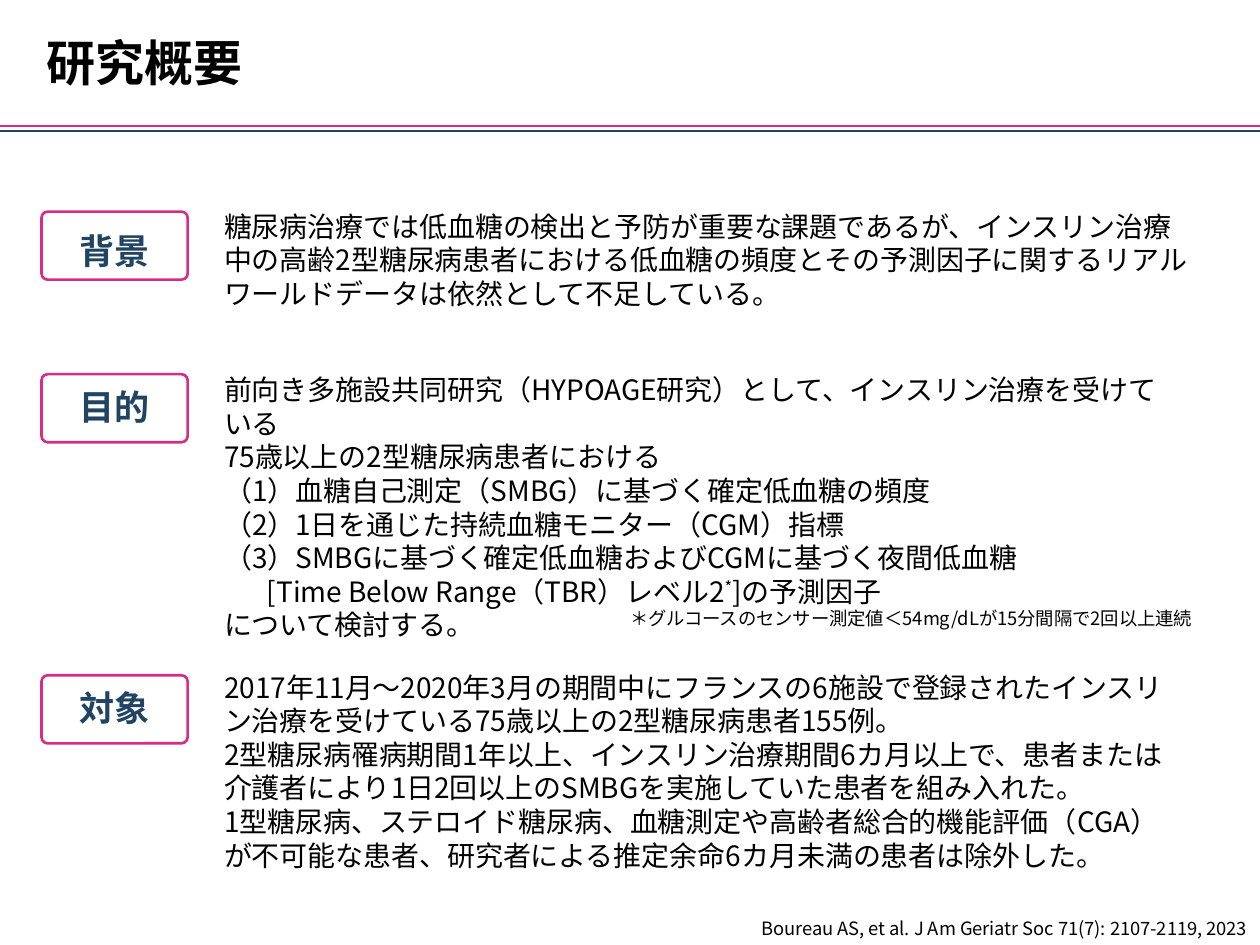
"""Build the study overview slide: background, objective and subjects."""
from lxml.etree import SubElement
from pptx import Presentation
from pptx.dml.color import RGBColor
from pptx.enum.shapes import MSO_CONNECTOR as Connector, MSO_SHAPE as Shape
from pptx.enum.text import MSO_ANCHOR as Anchor, MSO_AUTO_SIZE as AutoSize, PP_ALIGN as Align
from pptx.oxml.ns import qn
from pptx.util import Inches, Pt

NAVY = RGBColor(0x22, 0x44, 0x63)
PINK = RGBColor(0xD8, 0x2B, 0x83)
BLACK = RGBColor(0, 0, 0)
FONT = "Noto Sans CJK JP"
LABEL_LEFT, LABEL_WIDTH, LABEL_HEIGHT = 0.33, 1.16, 0.54
BODY_LEFT = 1.68

BACKGROUND = [
    "糖尿病治療では低血糖の検出と予防が重要な課題であるが、インスリン治療中の高齢2型糖尿病患者における"
    "低血糖の頻度とその予測因子に関するリアルワールドデータは依然として不足している。",
]
RANGE_LINE = 5
OBJECTIVE = [
    "前向き多施設共同研究（HYPOAGE研究）として、インスリン治療を受けている",
    "75歳以上の2型糖尿病患者における",
    "（1）血糖自己測定（SMBG）に基づく確定低血糖の頻度",
    "（2）1日を通じた持続血糖モニター（CGM）指標",
    "（3）SMBGに基づく確定低血糖およびCGMに基づく夜間低血糖",
    "[Time Below Range（TBR）レベル2",
    "について検討する。",
]
SUBJECTS = [
    "2017年11月～2020年3月の期間中にフランスの6施設で登録されたインスリン治療を受けている"
    "75歳以上の2型糖尿病患者155例。",
    "2型糖尿病罹病期間1年以上、インスリン治療期間6カ月以上で、患者または介護者により"
    "1日2回以上のSMBGを実施していた患者を組み入れた。",
    "1型糖尿病、ステロイド糖尿病、血糖測定や高齢者総合的機能評価（CGA）が不可能な患者、"
    "研究者による推定余命6カ月未満の患者は除外した。",
]
FOOTNOTE = "＊グルコースのセンサー測定値＜54mg/dLが15分間隔で2回以上連続"
CITATION = "Boureau AS, et al. J Am Geriatr Soc 71(7): 2107-2119, 2023"


def add_run(paragraph, text, size, color=BLACK, bold=False, baseline=None):
    """Add one run with its Latin and East Asian font."""
    run = paragraph.add_run()
    run.text = text
    font = run.font
    font.size, font.bold, font.name = Pt(size), bold, FONT
    font.color.rgb = color
    properties = run._r.get_or_add_rPr()
    SubElement(properties, qn("a:ea")).set("typeface", FONT)
    if baseline:
        properties.set("baseline", str(baseline))


def add_text(shapes, box, lines, size, color=BLACK, bold=False, align=Align.LEFT,
             anchor=Anchor.TOP, spacing=None, wrap=True):
    """Add a text box with one paragraph per line and return its paragraphs."""
    frame = shapes.add_textbox(*map(Inches, box)).text_frame
    frame.word_wrap = wrap
    frame.auto_size = AutoSize.SHAPE_TO_FIT_TEXT
    frame.vertical_anchor = anchor
    for index, line in enumerate(lines):
        paragraph = frame.add_paragraph() if index else frame.paragraphs[0]
        paragraph.alignment = align
        paragraph.line_spacing = spacing
        add_run(paragraph, line, size, color, bold)
    return frame.paragraphs


def add_rule(slide, top, color):
    """Add a full-width horizontal line."""
    rule = slide.shapes.add_connector(
        Connector.STRAIGHT, 0, Inches(top), Inches(10), Inches(top))
    rule.line.color.rgb = color
    rule.line.width = Pt(1.5)
    SubElement(rule._element.spPr, qn("a:effectLst"))


def add_label(slide, text, top, text_box, spacing):
    """Add a grouped section label: rounded frame and heading."""
    shapes = slide.shapes.add_group_shape().shapes
    frame = shapes.add_shape(
        Shape.ROUNDED_RECTANGLE,
        *map(Inches, (LABEL_LEFT, top, LABEL_WIDTH, LABEL_HEIGHT)))
    frame.adjustments[0] = 0.09
    frame.shadow.inherit = False
    frame.fill.background()
    frame.line.color.rgb = PINK
    frame.line.width = Pt(1.5)
    add_text(shapes, text_box, [text], 20, NAVY, True, Align.CENTER, spacing=spacing)


def add_note(slide, text, box):
    """Add a small right-aligned note."""
    add_text(slide.shapes, box, [text], 10.5, align=Align.RIGHT, anchor=Anchor.BOTTOM)


def add_objective(slide):
    """Add the objective text with its indented, superscripted range line."""
    paragraphs = add_text(slide.shapes, (BODY_LEFT, 2.91, 7.78, 1.99), OBJECTIVE, 16)
    range_paragraph = paragraphs[RANGE_LINE]
    range_paragraph._p.get_or_add_pPr().set("marL", str(Inches(0.34)))
    add_run(range_paragraph, "*", 16, baseline=30000)
    add_run(range_paragraph, "]の予測因子", 16)


def main():
    """Build and save the slide."""
    presentation = Presentation()
    presentation.slide_width, presentation.slide_height = Inches(10), Inches(7.5)
    slide = presentation.slides.add_slide(presentation.slide_layouts[6])

    add_rule(slide, 1.04, NAVY)
    add_rule(slide, 1, PINK)
    add_text(slide.shapes, (0.27, 0.21, 1.77, 0.57), ["研究概要"], 28, bold=True,
             anchor=Anchor.MIDDLE, wrap=False)
    add_note(slide, CITATION, (4.89, 7.22, 5.11, 0.28))

    add_label(slide, "背景", 1.68, (0.52, 1.71, 0.78, 0.46), 1.2)
    add_text(slide.shapes, (BODY_LEFT, 1.61, 7.89, 0.91), BACKGROUND, 16)
    add_text(slide.shapes, (BODY_LEFT, 5.27, 7.78, 1.72), SUBJECTS, 16)
    add_objective(slide)
    for text, top in (("目的", 2.97), ("対象", 5.36)):
        add_label(slide, text, top, (LABEL_LEFT, top + 0.08, LABEL_WIDTH, 0.4), 0.9)
    add_note(slide, FOOTNOTE, (4.02, 4.76, 5.54, 0.28))

    presentation.save("out.pptx")


if __name__ == "__main__":
    main()
